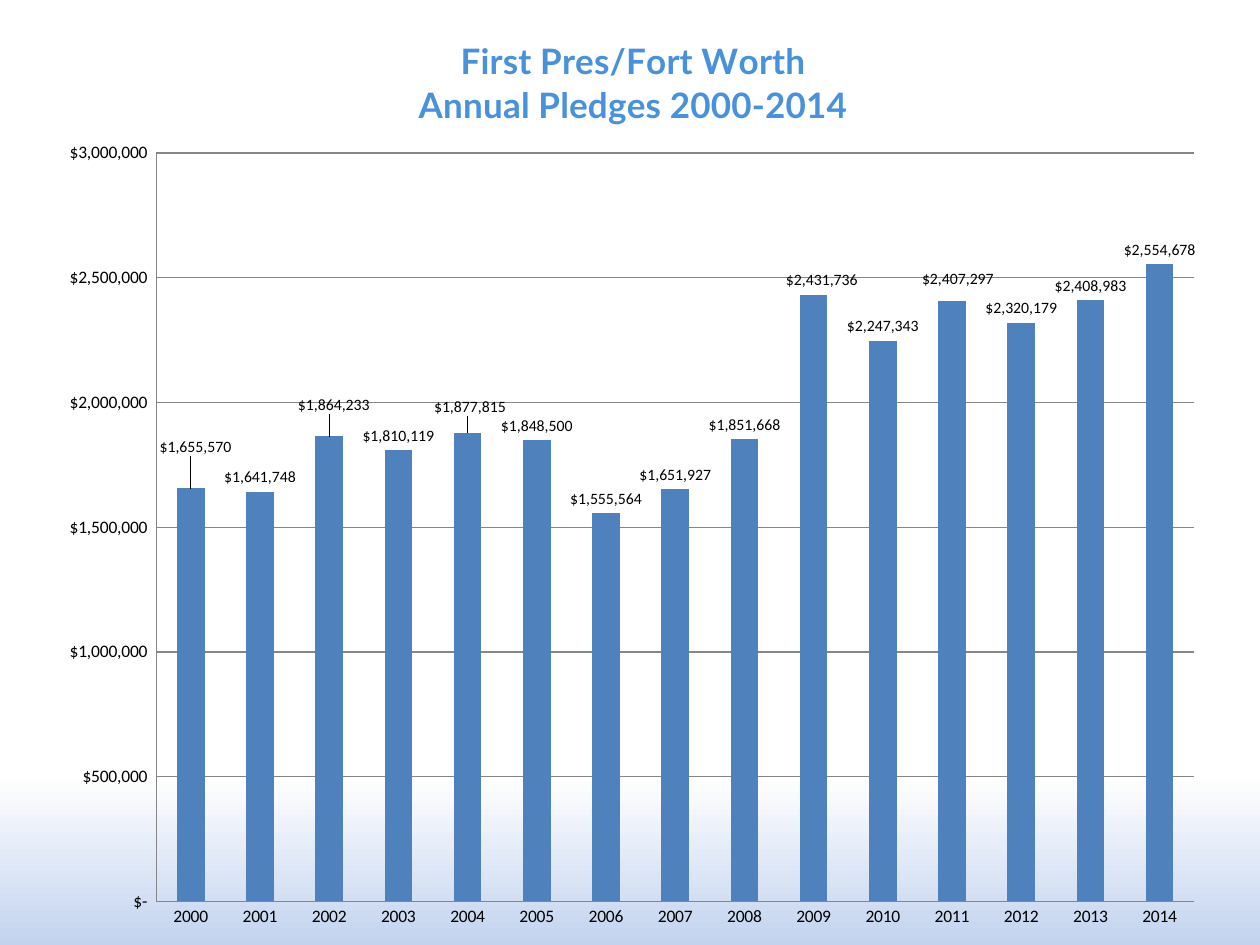
from lxml import etree
from pptx import Presentation
from pptx.chart.data import CategoryChartData
from pptx.dml.color import RGBColor
from pptx.enum.chart import XL_CHART_TYPE, XL_LABEL_POSITION, XL_TICK_MARK
from pptx.oxml.ns import qn
from pptx.util import Cm, Pt

COLUMNS = XL_CHART_TYPE.COLUMN_CLUSTERED
ABOVE = XL_LABEL_POSITION.OUTSIDE_END
NO_TICK = XL_TICK_MARK.NONE

BLUE = RGBColor(0x4F, 0x81, 0xBD)
SKY = RGBColor(0x48, 0x91, 0xDC)
PALE = RGBColor(0xC3, 0xD3, 0xEF)
WHITE = RGBColor(0xFF, 0xFF, 0xFF)
BLACK = RGBColor(0, 0, 0)
GREY = RGBColor(0x86, 0x86, 0x86)

# Content
TITLE = ["First Pres/Fort Worth", "Annual Pledges 2000-2014"]
START = 2000
PLEDGES = [1655570, 1641748, 1864233, 1810119, 1877815,
           1848500, 1555564, 1651927, 1851668, 2431736,
           2247343, 2407297, 2320179, 2408983, 2554678]
MONEY = '"$"#,##0'
LEDGER = '_("$"* #,##0_);_("$"* \\(#,##0\\);_("$"* "-"_);_(@_)'
# Label shifts by bar, as shares of the chart size
SHIFTS = {0: ("0.004", "-0.029"), 2: ("0.004", "-0.018"),
          4: ("0.002", "-0.012"), 9: ("0.007", "0"),
          11: ("0.005", "-0.008")}


def make_layout(**parts):
    """Return a manual chart layout with the given settings."""
    layout = etree.Element(qn("c:layout"))
    manual = etree.SubElement(layout, qn("c:manualLayout"))
    for name, val in parts.items():
        etree.SubElement(manual, qn("c:" + name)).set("val", val)
    return layout


def place(node, layout):
    """Put the layout after the first child, in place of an old one."""
    for old in node.findall(qn("c:layout")):
        node.remove(old)
    node.insert(1, layout)


def set_font(font, size, color, name="Calibri", bold=False):
    font.size, font.name, font.bold = Pt(size), name, bold
    font.color.rgb = color


def set_line(line):
    line.color.rgb = GREY
    line.width = Pt(0.75)


# Slide and background
deck = Presentation()
deck.slide_width, deck.slide_height = Cm(25.4), Cm(19.05)
slide = deck.slides.add_slide(deck.slide_layouts[6])
back = slide.background.fill
back.gradient()
back.gradient_angle = 90
for stop, color, spot in zip(back.gradient_stops, (PALE, WHITE), (0, 0.18)):
    stop.color.rgb = color
    stop.position = spot

# Chart
data = CategoryChartData(number_format=MONEY)
data.categories = [str(START + i) for i in range(len(PLEDGES))]
data.add_series("Series 1", PLEDGES)
chart = slide.shapes.add_chart(
    COLUMNS, Cm(0.85), Cm(0), Cm(23.7), Cm(19.05), data).chart
chart.has_legend = False
set_font(chart.font, 10, BLACK)

# Chart title
frame = chart.chart_title.text_frame
for i, text in enumerate(TITLE):
    para = frame.add_paragraph() if i else frame.paragraphs[0]
    run = para.add_run()
    run.text = text
    set_font(run.font, 20, SKY, "Lato", True)
head = chart.chart_title._element
place(head, make_layout(xMode="edge", yMode="edge", x="0.317", y="0.035"))
chart.chart_title.include_in_layout = False

# Plot area
area = chart._chartSpace.chart.plotArea
for old in area.findall(qn("c:layout")):
    area.remove(old)
area.insert(0, make_layout(
    layoutTarget="inner", xMode="edge", yMode="edge",
    x="0.097", y="0.162", w="0.883", h="0.792"))

# Axes
years, money = chart.category_axis, chart.value_axis
for axis in (years, money):
    axis.major_tick_mark = axis.minor_tick_mark = NO_TICK
    set_line(axis.format.line)
money.minimum_scale, money.maximum_scale = 0, 3000000
money.major_unit = 500000
money.has_major_gridlines = True
set_line(money.major_gridlines.format.line)
money.tick_labels.number_format = LEDGER
money.tick_labels.number_format_is_linked = False

# Bars and labels
plot = chart.plots[0]
plot.gap_width = 150
plot.vary_by_categories = False
bars = plot.series[0]
bars.format.fill.solid()
bars.format.fill.fore_color.rgb = BLUE
labels = bars.data_labels
labels.show_value = True
labels.position = ABOVE
labels.number_format = MONEY
labels.number_format_is_linked = False
set_font(labels.font, 9, BLACK)
for i in SHIFTS:
    label = bars.points[i].data_label
    label.position = ABOVE
    set_font(label.font, 9, BLACK)
for node in labels._element.findall(qn("c:dLbl")):
    x, y = SHIFTS[int(node.find(qn("c:idx")).get("val"))]
    place(node, make_layout(x=x, y=y))

deck.save("out.pptx")
